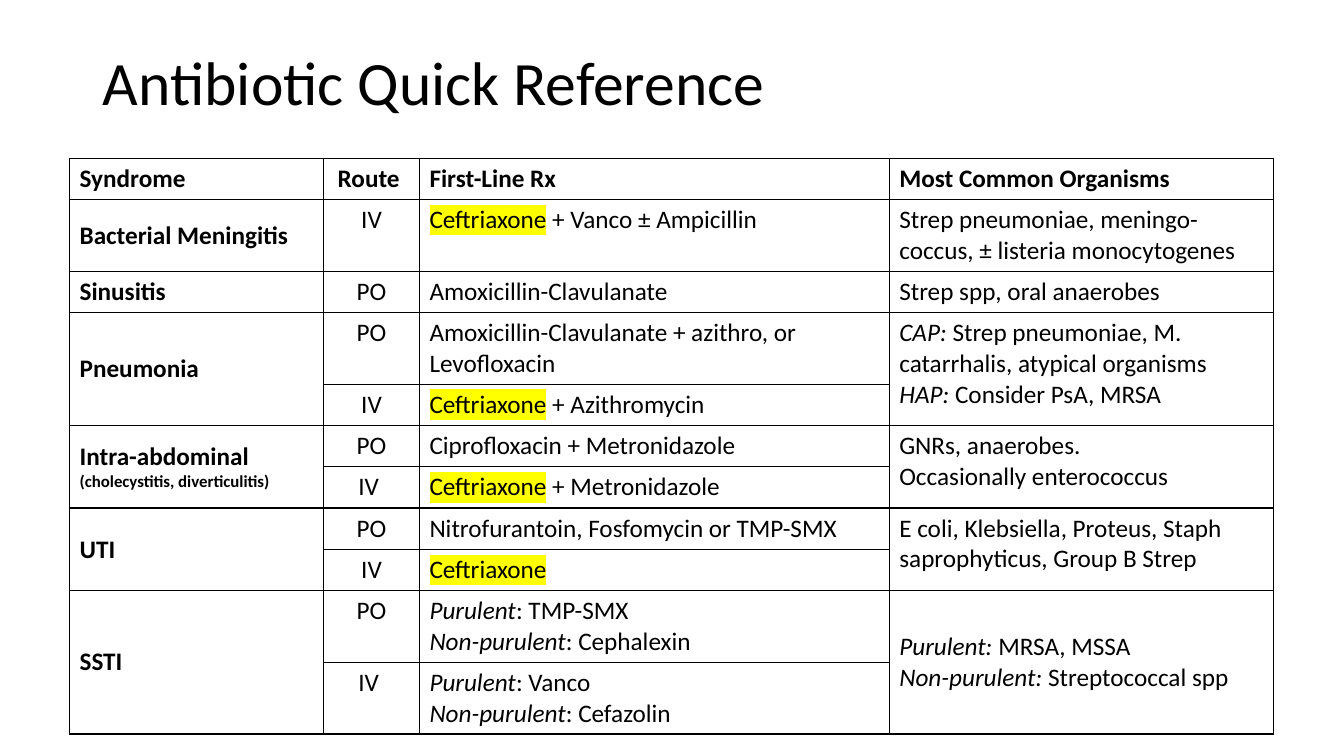
"""Build the antibiotic quick reference slide."""
import pptx
import pptx.dml.color
import pptx.enum.text
import pptx.oxml
import pptx.oxml.ns
import pptx.util
from pptx.util import Inches, Pt

TITLE = "Antibiotic Quick Reference"
FONT = "Calibri"
BLACK = "000000"
YELLOW = "FFFF00"
ITALIC, MARKED, SMALL = "italic", "marked", "small"
CEFTRIAXONE = (MARKED, "Ceftriaxone")
PURULENT = (ITALIC, "Purulent")
NON_PURULENT = (ITALIC, "Non-purulent")

HEADINGS = ["Syndrome", "Route ", "First-Line Rx", "Most Common Organisms"]
SYNDROMES = [
    (["Bacterial Meningitis"],
     [("IV", [[CEFTRIAXONE, " + Vanco ± Ampicillin"]])],
     ["Strep pneumoniae, meningo-coccus, ± listeria monocytogenes"]),
    (["Sinusitis"],
     [("PO", ["Amoxicillin-Clavulanate"])],
     ["Strep spp, oral anaerobes"]),
    (["Pneumonia"],
     [("PO", ["Amoxicillin-Clavulanate + azithro, or", "Levofloxacin"]),
      ("IV", [[CEFTRIAXONE, " + Azithromycin"]])],
     [[(ITALIC, "CAP: "), "Strep pneumoniae, M. catarrhalis, atypical organisms"],
      [(ITALIC, "HAP:"), " Consider PsA, MRSA"]]),
    (["Intra-abdominal", [(SMALL, "(cholecystitis, diverticulitis)")]],
     [("PO", ["Ciprofloxacin + Metronidazole"]),
      ("IV ", [[CEFTRIAXONE, " + Metronidazole"]])],
     ["GNRs, anaerobes.", "Occasionally enterococcus"]),
    (["UTI"],
     [("PO", ["Nitrofurantoin, Fosfomycin or TMP-SMX"]),
      ("IV", [[CEFTRIAXONE]])],
     ["E coli, Klebsiella, Proteus, Staph saprophyticus, Group B Strep"]),
    (["SSTI"],
     [("PO", [[PURULENT, ": TMP-SMX"], [NON_PURULENT, ": Cephalexin"]]),
      ("IV ", [[PURULENT, ": Vanco"], [NON_PURULENT, ": Cefazolin"]])],
     [[(ITALIC, "Purulent: "), "MRSA, MSSA"],
      [(ITALIC, "Non-purulent: "), "Streptococcal spp"]]),
]
MIDDLE_ORGANISMS = "SSTI"
COLUMN_WIDTHS = [2.52, 0.95, 4.66, 3.81]
ROW_HEIGHT = 0.41
TABLE_LEFT, TABLE_TOP = 0.69, 1.57


def color(value):
    return pptx.dml.color.RGBColor.from_string(value)


def set_font(font, size, bold=False):
    font.name = FONT
    font.size = Pt(size)
    font.bold = bold
    font.color.rgb = color(BLACK)


def highlight(run):
    properties = run._r.get_or_add_rPr()
    properties.append(pptx.oxml.parse_xml(
        f'<a:highlight {pptx.oxml.ns.nsdecls("a")}>'
        f'<a:srgbClr val="{YELLOW}"/></a:highlight>'))


def add_run(paragraph, piece):
    style, text = (None, piece) if isinstance(piece, str) else piece
    run = paragraph.add_run()
    run.text = text
    if style == ITALIC:
        run.font.italic = True
    elif style == SMALL:
        run.font.size = Pt(12)
    elif style == MARKED:
        highlight(run)


def fill_cell(cell, lines, bold=False, centered=False, middle=False):
    for index, line in enumerate(lines):
        frame = cell.text_frame
        paragraph = frame.add_paragraph() if index else frame.paragraphs[0]
        for piece in [line] if isinstance(line, str) else line:
            add_run(paragraph, piece)
        set_font(paragraph.font, 18, bold)
        if centered:
            paragraph.alignment = pptx.enum.text.PP_ALIGN.CENTER
    if middle:
        cell.vertical_anchor = pptx.enum.text.MSO_ANCHOR.MIDDLE


def draw_borders(cell):
    properties = cell._tc.get_or_add_tcPr()
    for side in ("lnL", "lnR", "lnT", "lnB"):
        properties.append(pptx.oxml.parse_xml(
            f'<a:{side} {pptx.oxml.ns.nsdecls("a")} w="{Pt(1)}"><a:solidFill>'
            f'<a:srgbClr val="{BLACK}"/></a:solidFill></a:{side}>'))
    cell.fill.background()


def add_title(slide):
    title = slide.shapes.title
    title.left, title.top = Inches(0.92), Inches(0.12)
    title.width, title.height = Inches(11.5), Inches(1.45)
    title.text_frame.text = TITLE
    title.text_frame.vertical_anchor = pptx.enum.text.MSO_ANCHOR.MIDDLE
    paragraph = title.text_frame.paragraphs[0]
    paragraph.alignment = pptx.enum.text.PP_ALIGN.LEFT
    paragraph.line_spacing = 0.9
    set_font(paragraph.font, 44)


def add_reference_table(slide):
    row_count = 1 + sum(len(routes) for _, routes, _ in SYNDROMES)
    table = slide.shapes.add_table(
        row_count, len(HEADINGS), Inches(TABLE_LEFT), Inches(TABLE_TOP),
        Inches(sum(COLUMN_WIDTHS)), Inches(ROW_HEIGHT * row_count)).table
    table.first_row = table.horz_banding = False
    for column, width in zip(table.columns, COLUMN_WIDTHS):
        column.width = Inches(width)
    for cell in table.iter_cells():
        draw_borders(cell)

    for column, heading in enumerate(HEADINGS):
        fill_cell(table.cell(0, column), [heading], bold=True,
                  centered=column == 1, middle=column == 0)
    top = 1
    for syndrome, routes, organisms in SYNDROMES:
        bottom = top + len(routes) - 1
        if bottom > top:
            for column in (0, 3):
                table.cell(top, column).merge(table.cell(bottom, column))
        fill_cell(table.cell(top, 0), syndrome, bold=True, middle=True)
        fill_cell(table.cell(top, 3), organisms,
                  middle=syndrome[0] == MIDDLE_ORGANISMS)
        for row, (route, treatment) in enumerate(routes, top):
            fill_cell(table.cell(row, 1), [route], centered=True)
            fill_cell(table.cell(row, 2), treatment)
        top = bottom + 1


def main():
    presentation = pptx.Presentation()
    presentation.slide_width = Inches(13.33)
    presentation.slide_height = Inches(7.5)
    slide = presentation.slides.add_slide(presentation.slide_layouts[5])
    add_reference_table(slide)
    add_title(slide)
    presentation.save("out.pptx")


if __name__ == "__main__":
    main()
